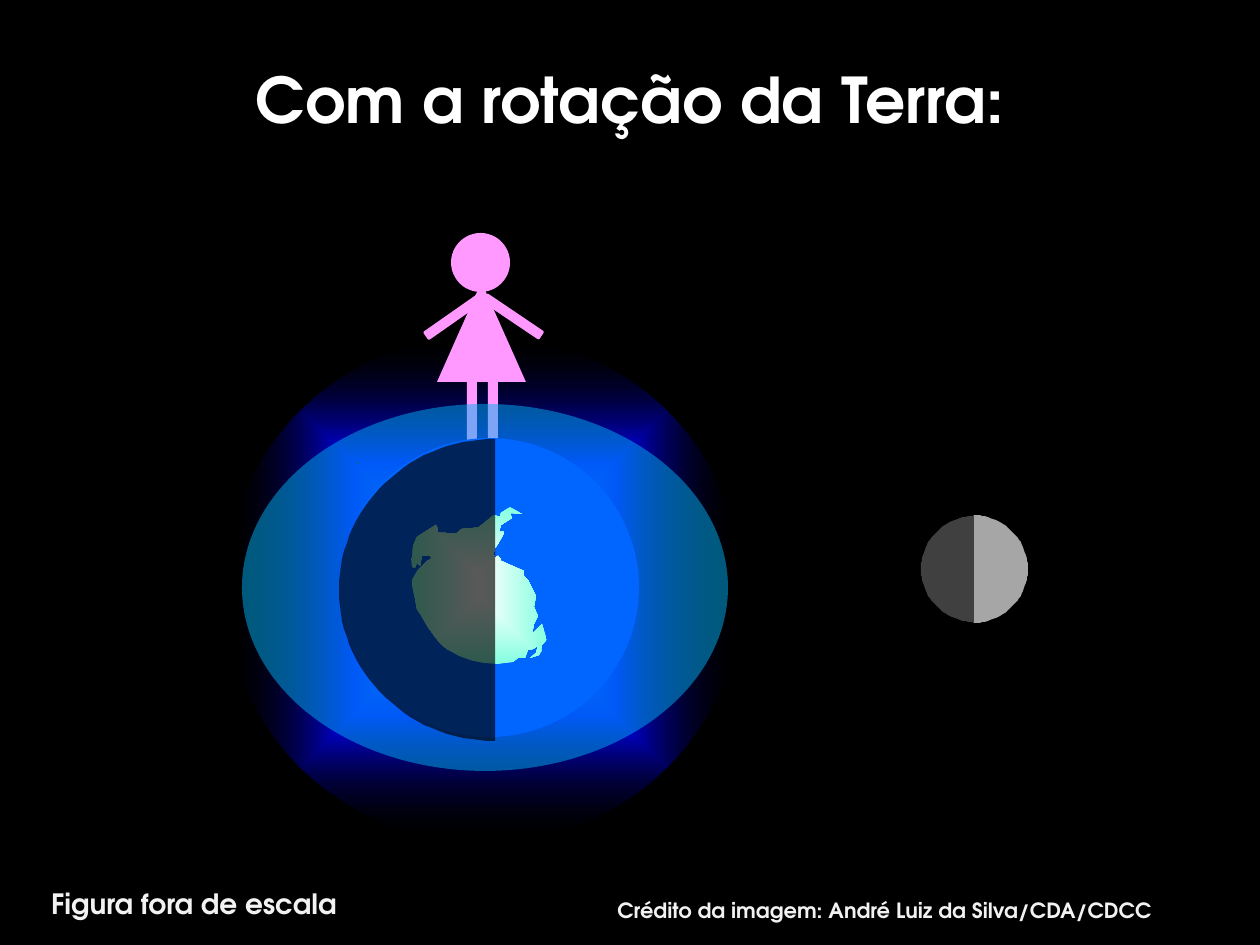
from dataclasses import dataclass
from math import cos, pi, sin

from pptx import Presentation
from pptx.dml.color import RGBColor
from pptx.enum.shapes import MSO_SHAPE
from pptx.enum.text import MSO_ANCHOR, PP_ALIGN
from pptx.oxml import parse_xml
from pptx.oxml.ns import nsdecls, qn
from pptx.util import Pt

OVAL = MSO_SHAPE.OVAL
LIMB = MSO_SHAPE.ROUNDED_RECTANGLE
TRIANGLE = MSO_SHAPE.ISOSCELES_TRIANGLE
CENTER, LEFT = PP_ALIGN.CENTER, PP_ALIGN.LEFT
TOP = MSO_ANCHOR.TOP

BLACK = RGBColor(0x00, 0x00, 0x00)
WHITE = RGBColor(0xFF, 0xFF, 0xFF)
OFF_WHITE = RGBColor(0xF2, 0xF2, 0xF2)
PINK = RGBColor(0xFF, 0x99, 0xFF)
OCEAN = RGBColor(0x00, 0x66, 0xFF)
BLUE = RGBColor(0x00, 0x00, 0xFF)
TIDE = RGBColor(0x00, 0xB0, 0xF0)
MINT = RGBColor(0x85, 0xFF, 0xE0)
GREEN = RGBColor(0x00, 0x80, 0x00)
MOON_DAY = RGBColor(0xA6, 0xA6, 0xA6)
MOON_NIGHT = RGBColor(0x40, 0x40, 0x40)

FONT = "TeX Gyre Adventor"
EMU_PER_PX = 914400 / 126
ARC_STEPS = 60


@dataclass(frozen=True)
class Figure:
    kind: MSO_SHAPE
    left: int
    top: int
    width: int
    height: int
    color: RGBColor
    rotation: int = 0
    opacity: int = 100


@dataclass(frozen=True)
class HalfDisc:
    center_x: int
    center_y: int
    radius_x: int
    radius_y: int
    side: int  # -1 is the left half, 1 the right half
    color: RGBColor
    opacity: int = 100
    outlined: bool = False


@dataclass(frozen=True)
class Stop:
    percent: int
    color: RGBColor
    opacity: int = 100


GLOW = Figure(OVAL, 226, 336, 515, 507, BLUE)
GLOW_STOPS = (Stop(0, OCEAN), Stop(50, BLUE), Stop(100, BLACK, 0))
GIRL = (
    Figure(LIMB, 467, 372, 10, 69, PINK),
    Figure(LIMB, 488, 372, 10, 69, PINK),
    Figure(LIMB, 508, 282, 10, 69, PINK, rotation=124),
    Figure(LIMB, 449, 282, 10, 69, PINK, rotation=55),
    Figure(TRIANGLE, 437, 282, 89, 100, PINK),
    Figure(OVAL, 451, 233, 59, 59, PINK),
)
TIDAL_BULGE = Figure(OVAL, 242, 404, 486, 367, TIDE, opacity=51)
MOON = (
    HalfDisc(974, 569, 53, 53, 1, MOON_DAY, outlined=True),
    HalfDisc(974, 569, 53, 53, -1, MOON_NIGHT),
)
EARTH = Figure(OVAL, 340, 438, 299, 299, OCEAN)
NIGHT = HalfDisc(495, 590, 156, 151, -1, BLACK, opacity=65)
LAND_STOPS = (Stop(3, WHITE), Stop(100, MINT))
LAND = (
    (505, 663), (513, 662), (518, 658), (525, 658), (528, 650), (533, 649),
    (538, 646), (536, 653), (530, 658), (539, 655), (542, 650), (541, 650),
    (542, 645), (547, 640), (542, 624), (532, 634), (534, 624), (538, 616),
    (534, 607), (536, 596), (528, 580), (524, 576), (524, 571), (501, 561),
    (500, 558), (498, 556), (495, 558), (493, 552), (495, 552), (494, 549),
    (498, 544), (499, 542), (504, 533), (504, 532), (499, 532), (501, 525),
    (512, 518), (510, 513), (522, 514), (510, 507), (507, 509), (501, 513),
    (500, 517), (494, 515), (478, 528), (474, 528), (462, 529), (457, 533),
    (454, 534), (446, 533), (438, 533), (438, 529), (436, 525), (417, 537),
    (413, 546), (412, 559), (411, 557), (412, 567), (415, 568), (417, 563),
    (420, 566), (422, 556), (430, 556), (432, 558), (426, 562), (418, 570),
    (412, 580), (412, 585), (415, 598), (417, 609), (421, 615), (428, 627),
    (436, 638), (441, 644), (447, 649), (460, 656), (471, 660), (484, 663),
    (498, 664),
)
ISLET = ((357, 462), (358, 464), (359, 464), (358, 463))


def px(length: int) -> int:
    return round(length * EMU_PER_PX)


def paint(shape, color: RGBColor, opacity: int = 100) -> None:
    """Give a shape a flat fill with no line or shadow."""
    shape.shadow.inherit = False
    shape.fill.solid()
    shape.fill.fore_color.rgb = color
    shape.line.fill.background()
    if opacity < 100:
        color_element = shape._element.spPr.find(qn("a:solidFill"))[0]
        color_element.append(
            parse_xml(f'<a:alpha {nsdecls("a")} val="{opacity * 1000}"/>'))


def paint_gradient(shape, stops: tuple[Stop, ...]) -> None:
    """Replace the flat fill by a gradient running out from the middle."""
    stop_xml = "".join(
        f'<a:gs pos="{stop.percent * 1000}"><a:srgbClr val="{stop.color}">'
        f'<a:alpha val="{stop.opacity * 1000}"/></a:srgbClr></a:gs>'
        for stop in stops)
    properties = shape._element.spPr
    properties.replace(properties.find(qn("a:solidFill")), parse_xml(
        f'<a:gradFill {nsdecls("a")} rotWithShape="1"><a:gsLst>{stop_xml}</a:gsLst>'
        '<a:path path="shape"><a:fillToRect l="50000" t="50000" r="50000" b="50000"/>'
        '</a:path></a:gradFill>'))


def draw_figure(shapes, figure: Figure):
    shape = shapes.add_shape(figure.kind, px(figure.left), px(figure.top),
                             px(figure.width), px(figure.height))
    shape.rotation = figure.rotation
    paint(shape, figure.color, figure.opacity)
    return shape


def draw_outline(shapes, points, color: RGBColor, opacity: int = 100):
    builder = shapes.build_freeform(*points[0], scale=EMU_PER_PX)
    builder.add_line_segments(points[1:], close=True)
    shape = builder.convert_to_shape()
    paint(shape, color, opacity)
    return shape


def draw_half_disc(shapes, half: HalfDisc) -> None:
    angles = [pi * step / ARC_STEPS for step in range(ARC_STEPS + 1)]
    points = [(half.center_x + half.side * half.radius_x * sin(angle),
               half.center_y - half.radius_y * cos(angle)) for angle in angles]
    shape = draw_outline(shapes, points, half.color, half.opacity)
    if half.outlined:
        shape.line.color.rgb = half.color
        shape.line.width = Pt(1)


def write(shape, text: str, size: int, color: RGBColor, alignment) -> None:
    frame = shape.text_frame
    frame.text = text
    frame.vertical_anchor = TOP
    paragraph = frame.paragraphs[0]
    paragraph.alignment = alignment
    font = paragraph.font
    font.name, font.size, font.bold = FONT, Pt(size), True
    font.color.rgb = color


def main() -> None:
    presentation = Presentation()
    presentation.slide_width, presentation.slide_height = px(1260), px(945)
    slide = presentation.slides.add_slide(presentation.slide_layouts[5])
    slide.background.fill.solid()
    slide.background.fill.fore_color.rgb = BLACK
    shapes = slide.shapes

    # Glow, observer and tidal bulge
    paint_gradient(draw_figure(shapes, GLOW), GLOW_STOPS)
    girl = shapes.add_group_shape()
    for part in GIRL:
        draw_figure(girl.shapes, part)
    draw_figure(shapes, TIDAL_BULGE)

    # Title
    title = shapes.title
    title.left, title.top, title.width, title.height = px(0), px(54), px(1260), px(158)
    write(title, "Com a rotação da Terra:", 36, WHITE, CENTER)

    # Moon
    moon = shapes.add_group_shape()
    for half in MOON:
        draw_half_disc(moon.shapes, half)

    # Earth with its night side
    earth = shapes.add_group_shape()
    draw_figure(earth.shapes, EARTH)
    paint_gradient(draw_outline(earth.shapes, LAND, MINT), LAND_STOPS)
    draw_outline(shapes, ISLET, GREEN)
    draw_half_disc(shapes, NIGHT)

    # Captions
    credit = shapes.add_textbox(px(605), px(891), px(665), px(38))
    credit.text_frame.word_wrap = True
    write(credit, "Crédito da imagem: André Luiz da Silva/CDA/CDCC", 12, OFF_WHITE, LEFT)
    scale_note = shapes.add_textbox(px(35), px(880), px(318), px(47))
    scale_note.text_frame.word_wrap = False
    write(scale_note, "Figura fora de escala", 16, OFF_WHITE, CENTER)

    presentation.save("out.pptx")


if __name__ == "__main__":
    main()
